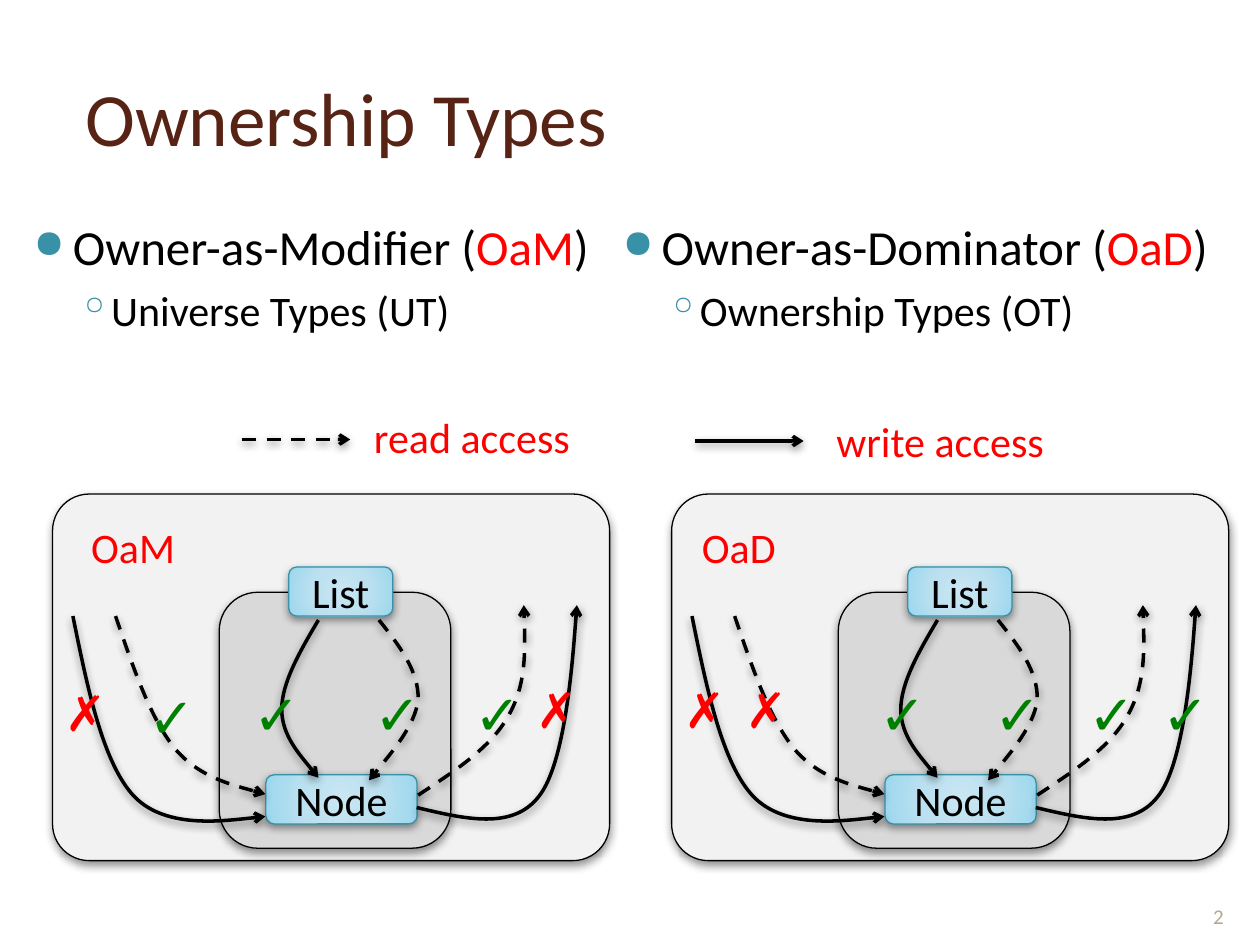
from dataclasses import dataclass
from typing import NamedTuple

from lxml.etree import SubElement
from pptx import Presentation
from pptx.dml.color import RGBColor
from pptx.enum.dml import MSO_LINE
from pptx.enum.shapes import MSO_CONNECTOR, MSO_SHAPE
from pptx.enum.text import MSO_ANCHOR, MSO_AUTO_SIZE, PP_ALIGN
from pptx.oxml.ns import qn
from pptx.util import Cm, Pt


@dataclass(frozen=True)
class Theme:
    font: str = "Calibri"
    mark_font: str = "Arial"
    title: str = "572314"
    ink: str = "000000"
    accent: str = "FF0000"
    allowed: str = "008000"
    bullet: str = "3891A7"
    number: str = "B6A98A"
    outer: str = "F2F2F2"
    inner: str = "D9D9D9"
    glow: tuple = ((0, "C9E6F2"), (50, "BBE0EF"), (100, "9BD7EE"))
    title_size: float = 43
    head_size: float = 28
    body_size: float = 24
    number_size: float = 12
    check_size: float = 32
    cross_size: float = 28
    border: float = 0.75
    arrow: float = 2


THEME = Theme()


class Box(NamedTuple):
    """Left, top, width and height in centimetres."""
    left: float
    top: float
    width: float
    height: float

    def shifted(self, dx: float, dy: float) -> "Box":
        return Box(self.left + dx, self.top + dy, self.width, self.height)

    def lengths(self) -> list:
        return [Cm(value) for value in self]


class Run(NamedTuple):
    text: str
    size: float
    color: str
    font: str = THEME.font


class Access(NamedTuple):
    """Start point, then three Bézier points per curve; a read is dashed."""
    is_read: bool
    points: tuple


class Mark(NamedTuple):
    is_allowed: bool
    x: float
    y: float = 3.61


class Panel(NamedTuple):
    name: str
    left: float
    name_x: float
    marks: tuple


class Column(NamedTuple):
    box: Box
    principle: str
    short: str
    system: str


class Legend(NamedTuple):
    is_read: bool
    start: float
    y: float
    label: str
    label_box: Box


PANEL_TOP = 9.96
OUTER = Box(0, 0, 11.23, 7.39)
INNER = Box(3.36, 1.98, 4.67, 5.16)
OBJECTS = {"List": Box(4.76, 1.47, 2.1, 0.99), "Node": Box(4.3, 5.66, 3.05, 0.99)}
ACCESSES = (
    Access(False, ((0.41, 2.46), (0.71, 3.94), (1.02, 5.44), (1.65, 6.1),
                   (2.31, 6.78), (4.29, 6.5), (4.29, 6.5))),
    Access(True, ((1.27, 2.46), (1.63, 3.51), (1.98, 4.55), (2.49, 5.16),
                  (3, 5.74), (4.29, 6.05), (4.29, 6.05))),
    Access(True, ((7.37, 6.07), (8.1, 5.59), (8.84, 5.11), (9.19, 4.47),
                  (9.55, 3.84), (9.53, 3.02), (9.5, 2.24))),
    Access(False, ((7.34, 6.32), (8.31, 6.55), (9.27, 6.78), (9.8, 6.1),
                   (10.36, 5.41), (10.57, 2.24), (10.57, 2.24))),
    Access(False, ((5.36, 2.54), (4.98, 3.18), (4.62, 3.81), (4.62, 4.34),
                   (4.62, 4.88), (5.36, 5.72), (5.36, 5.72))),
    Access(True, ((6.58, 2.54), (6.99, 3.05), (7.39, 3.58), (7.37, 4.14),
                  (7.32, 4.67), (6.38, 5.77), (6.38, 5.77))),
)
PANELS = (
    Panel("OaD", 13.54, 0.36,
          (Mark(True, 3.94), Mark(True, 6.25), Mark(True, 8.15), Mark(True, 9.65),
           Mark(False, 0), Mark(False, 1.24))),
    Panel("OaM", 1.06, 0.53,
          (Mark(True, 1.68, 3.68), Mark(True, 3.81), Mark(True, 6.25), Mark(True, 8.26),
           Mark(False, 0, 3.68), Mark(False, 9.5))),
)
COLUMNS = (
    Column(Box(0.2, 4.24, 12.14, 12.95), "Owner-as-Modifier", "OaM", "Universe Types (UT)"),
    Column(Box(12.07, 4.24, 13.33, 12.95), "Owner-as-Dominator", "OaD", "Ownership Types (OT)"),
)
LEGENDS = (
    Legend(True, 4.88, 8.86, "read access", Box(7.29, 8.18, 4.47, 1.27)),
    Legend(False, 14.02, 8.89, "write access", Box(16.61, 8.26, 4.78, 1.27)),
)


def rgb(color: str) -> RGBColor:
    return RGBColor.from_string(color)


def node(parent, tag: str, **attributes):
    return SubElement(parent, qn(tag), {key: str(value) for key, value in attributes.items()})


def add_run(paragraph, run: Run) -> None:
    piece = paragraph.add_run()
    piece.text = run.text
    piece.font.size = Pt(run.size)
    piece.font.name = run.font
    piece.font.color.rgb = rgb(run.color)


def add_text(slide, box: Box, run: Run, anchor=MSO_ANCHOR.TOP, align=PP_ALIGN.LEFT,
             wrap: bool = False) -> None:
    frame = slide.shapes.add_textbox(*box.lengths()).text_frame
    frame.word_wrap = wrap
    frame.auto_size = MSO_AUTO_SIZE.NONE if wrap else MSO_AUTO_SIZE.SHAPE_TO_FIT_TEXT
    frame.vertical_anchor = anchor
    frame.paragraphs[0].alignment = align
    add_run(frame.paragraphs[0], run)


def cast_shadow(shape) -> None:
    """Add a soft shadow below; call once fill and line are set."""
    effects = node(shape._element.spPr, "a:effectLst")
    shadow = node(effects, "a:outerShdw", blurRad=Pt(5), dist=Pt(2), dir=5400000, rotWithShape=0)
    node(node(shadow, "a:srgbClr", val=THEME.ink), "a:alpha", val=43000)


def style_arrow(shape, is_read: bool) -> None:
    shape.line.color.rgb = rgb(THEME.ink)
    shape.line.width = Pt(THEME.arrow)
    if is_read:
        shape.line.dash_style = MSO_LINE.DASH
    node(shape.line._get_or_add_ln(), "a:tailEnd", type="arrow")
    cast_shadow(shape)


def add_rounded(slide, box: Box, fill: str, border: str):
    shape = slide.shapes.add_shape(MSO_SHAPE.ROUNDED_RECTANGLE, *box.lengths())
    shape.fill.solid()
    shape.fill.fore_color.rgb = rgb(fill)
    shape.line.color.rgb = rgb(border)
    shape.line.width = Pt(THEME.border)
    cast_shadow(shape)
    return shape


def add_object(slide, box: Box, name: str) -> None:
    shape = add_rounded(slide, box, THEME.glow[0][1], THEME.bullet)
    properties = shape._element.spPr
    gradient = node(properties, "a:gradFill", rotWithShape=1)
    stops = node(gradient, "a:gsLst")
    for position, color in THEME.glow:
        node(node(stops, "a:gs", pos=position * 1000), "a:srgbClr", val=color)
    center = node(gradient, "a:path", path="circle")
    node(center, "a:fillToRect", l=50000, t=50000, r=50000, b=50000)
    properties.replace(properties.find(qn("a:solidFill")), gradient)
    frame = shape.text_frame
    frame.margin_left = frame.margin_right = frame.margin_top = frame.margin_bottom = 0
    frame.vertical_anchor = MSO_ANCHOR.BOTTOM
    paragraph = frame.paragraphs[0]
    paragraph.alignment = PP_ALIGN.CENTER
    paragraph.line_spacing = 0.5
    add_run(paragraph, Run(name, THEME.body_size, THEME.ink))


def add_access(slide, access: Access, left: float) -> None:
    """Draw straight steps between the anchors, then bend each into a Bézier curve."""
    points = [(Cm(left + x), Cm(PANEL_TOP + y)) for x, y in access.points]
    builder = slide.shapes.build_freeform(*points[0])
    builder.add_line_segments(points[3::3], close=False)
    shape = builder.convert_to_shape()
    outline = shape._element.spPr.find(".//" + qn("a:path"))
    for index, step in enumerate(outline.findall(qn("a:lnTo"))):
        curve = node(outline, "a:cubicBezTo")
        for x, y in points[3 * index + 1:3 * index + 4]:
            node(curve, "a:pt", x=x - shape.left, y=y - shape.top)
        outline.replace(step, curve)
    shape.fill.background()
    style_arrow(shape, access.is_read)


def add_mark(slide, mark: Mark, left: float) -> None:
    if mark.is_allowed:
        size, run = (1.37, 1.63), Run("✓", THEME.check_size, THEME.allowed, THEME.mark_font)
    else:
        size, run = (1.09, 1.45), Run("✗", THEME.cross_size, THEME.accent, THEME.mark_font)
    add_text(slide, Box(left + mark.x, PANEL_TOP + mark.y, *size), run)


def add_panel(slide, panel: Panel) -> None:
    outer = add_rounded(slide, OUTER.shifted(panel.left, PANEL_TOP), THEME.outer, THEME.ink)
    outer.adjustments[0] = 0.1
    add_rounded(slide, INNER.shifted(panel.left, PANEL_TOP), THEME.inner, THEME.ink)
    for name, box in OBJECTS.items():
        add_object(slide, box.shifted(panel.left, PANEL_TOP), name)
    for access in ACCESSES:
        add_access(slide, access, panel.left)
    add_text(slide, Box(panel.left + panel.name_x, PANEL_TOP + 0.43, 2.26, 1.27),
             Run(panel.name, THEME.body_size, THEME.accent))
    for mark in panel.marks:
        add_mark(slide, mark, panel.left)


def format_bullet(paragraph, sign: str, indent: float, hang: float, before: float,
                  percent: int) -> None:
    paragraph.space_before = Pt(before)
    properties = paragraph._p.get_or_add_pPr()
    properties.set("marL", str(Cm(indent)))
    properties.set("indent", str(-Cm(hang)))
    node(node(properties, "a:buClr"), "a:srgbClr", val=THEME.bullet)
    node(properties, "a:buSzPct", val=percent * 1000)
    node(properties, "a:buChar", char=sign)


def add_column(slide, column: Column) -> None:
    frame = slide.shapes.add_textbox(*column.box.lengths()).text_frame
    frame.word_wrap = True
    principle, system = frame.paragraphs[0], frame.add_paragraph()
    format_bullet(principle, "●", 1.02, 0.79, 6, 80)
    for text, color in ((f"{column.principle} (", THEME.ink), (column.short, THEME.accent),
                        (")", THEME.ink)):
        add_run(principle, Run(text, THEME.head_size, color))
    system.level = 1
    format_bullet(system, "◦", 1.78, 0.66, 5.5, 100)
    add_run(system, Run(column.system, THEME.body_size, THEME.ink))


def add_legend(slide, legend: Legend) -> None:
    y = Cm(legend.y)
    arrow = slide.shapes.add_connector(MSO_CONNECTOR.STRAIGHT, Cm(legend.start), y,
                                       Cm(legend.start + 2.18), y)
    style_arrow(arrow, legend.is_read)
    add_text(slide, legend.label_box, Run(legend.label, THEME.body_size, THEME.accent))


def main() -> None:
    deck = Presentation()
    deck.slide_width, deck.slide_height = Cm(25.4), Cm(19.05)
    slide = deck.slides.add_slide(deck.slide_layouts[6])
    add_text(slide, Box(1.47, 0.76, 20.83, 3.18),
             Run("Ownership Types", THEME.title_size, THEME.title), MSO_ANCHOR.MIDDLE, wrap=True)
    for column in COLUMNS:
        add_column(slide, column)
    add_text(slide, Box(23.93, 17.53, 1.27, 1.32), Run("2", THEME.number_size, THEME.number),
             MSO_ANCHOR.BOTTOM, PP_ALIGN.CENTER, wrap=True)
    for panel in PANELS:
        add_panel(slide, panel)
    for legend in LEGENDS:
        add_legend(slide, legend)
    deck.save("out.pptx")


if __name__ == "__main__":
    main()
